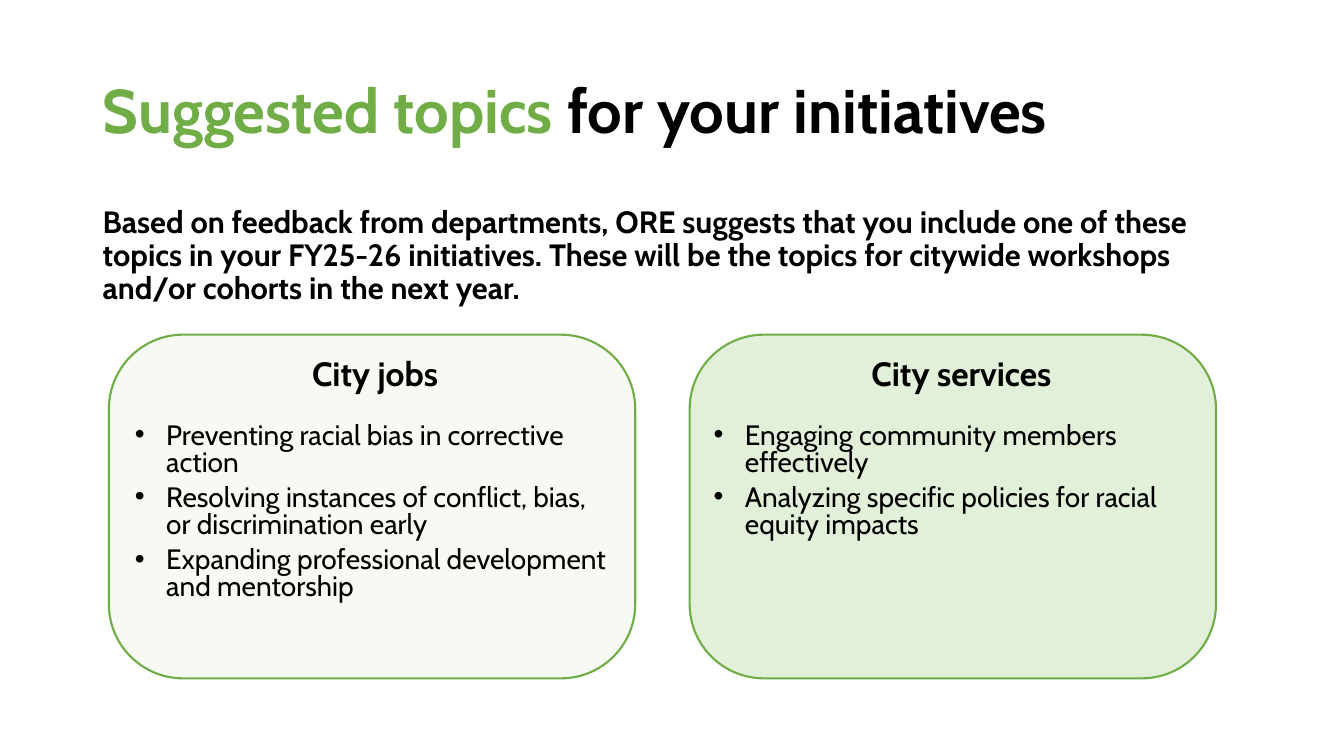
from lxml import etree
from pptx import Presentation
from pptx.dml.color import RGBColor
from pptx.enum.shapes import MSO_SHAPE
from pptx.enum.text import MSO_ANCHOR, MSO_AUTO_SIZE, PP_ALIGN
from pptx.oxml.ns import qn
from pptx.util import Inches, Pt

ROUNDED = MSO_SHAPE.ROUNDED_RECTANGLE
MIDDLE = MSO_ANCHOR.MIDDLE
NO_FIT = MSO_AUTO_SIZE.NONE
LEFT, CENTER = PP_ALIGN.LEFT, PP_ALIGN.CENTER

GREEN = RGBColor(0x70, 0xAD, 0x47)
PALE_GREEN = RGBColor(0xE2, 0xF0, 0xD9)
BLACK = RGBColor(0, 0, 0)
FONT = "Cabin"

TITLE = [("Suggested topics ", GREEN), ("for your initiatives", BLACK)]
INTRO = (
    "Based on feedback from departments, ORE suggests that you include one of "
    "these topics in your FY25-26 initiatives. These will be the topics for "
    "citywide workshops and/or cohorts in the next year."
)
# Card left, text left, text width and text height are in inches; opacity in percent.
CARDS = [
    {
        "heading": "City jobs",
        "topics": [
            "Preventing racial bias in corrective action",
            "Resolving instances of conflict, bias, or discrimination early",
            "Expanding professional development and mentorship",
        ],
        "left": 1.08, "text_left": 1.24, "text_width": 4.96, "text_height": 2.52,
        "opacity": 30,
    },
    {
        "heading": "City services",
        "topics": [
            "Engaging community members effectively",
            "Analyzing specific policies for racial equity impacts",
        ],
        "left": 6.84, "text_left": 6.98, "text_width": 5.11, "text_height": 1.9,
        "opacity": 100,
    },
]
CARD_TOP, CARD_WIDTH, CARD_HEIGHT = 3.32, 5.22, 3.41
CARD_TEXT_TOP = 3.53
TOPIC_INDENT = Inches(0.31)


def add_run(paragraph, text, size, color=BLACK, bold=False):
    run = paragraph.add_run()
    run.text = text
    run.font.color.rgb = color
    styles = {"name": FONT, "size": Pt(size), "bold": bold}
    for key, value in styles.items():
        setattr(run.font, key, value)


def format_paragraph(paragraph, **styles):
    for key, value in styles.items():
        setattr(paragraph, key, value)


def add_text_frame(slide, left, top, width, height):
    box = slide.shapes.add_textbox(*map(Inches, (left, top, width, height)))
    box.text_frame.word_wrap = True
    return box.text_frame


def add_bullet(paragraph):
    properties = paragraph._p.get_or_add_pPr()
    properties.set("marL", str(TOPIC_INDENT))
    properties.set("indent", str(-TOPIC_INDENT))
    etree.SubElement(properties, qn("a:buFont")).set("typeface", "Arial")
    etree.SubElement(properties, qn("a:buChar")).set("char", "•")


def add_card(slide, card):
    panel = slide.shapes.add_shape(
        ROUNDED, *map(Inches, (card["left"], CARD_TOP, CARD_WIDTH, CARD_HEIGHT)))
    panel.adjustments[0] = 0.216
    panel.shadow.inherit = False
    panel.fill.solid()
    panel.fill.fore_color.rgb = PALE_GREEN
    panel.line.color.rgb = GREEN
    panel.line.width = Pt(1.5)
    if card["opacity"] < 100:
        color = panel._element.spPr.find(qn("a:solidFill"))[0]
        etree.SubElement(color, qn("a:alpha")).set("val", str(card["opacity"] * 1000))

    frame = add_text_frame(
        slide, card["text_left"], CARD_TEXT_TOP, card["text_width"], card["text_height"])
    heading = frame.paragraphs[0]
    format_paragraph(heading, alignment=CENTER, line_spacing=0.8, space_after=Pt(22))
    add_run(heading, card["heading"], 24, bold=True)
    for topic in card["topics"]:
        paragraph = frame.add_paragraph()
        format_paragraph(paragraph, line_spacing=0.8, space_after=Pt(6))
        add_bullet(paragraph)
        add_run(paragraph, topic, 20)


def main():
    deck = Presentation()
    deck.slide_width, deck.slide_height = Inches(13.33), Inches(7.5)
    slide = deck.slides.add_slide(deck.slide_layouts[5])

    title = slide.shapes.title
    place = {"left": 0.92, "top": 0.4, "width": 11.5, "height": 1.45}
    for side, length in place.items():
        setattr(title, side, Inches(length))
    title.text_frame.vertical_anchor = MIDDLE
    title.text_frame.auto_size = NO_FIT
    title_line = title.text_frame.paragraphs[0]
    format_paragraph(title_line, alignment=LEFT, line_spacing=0.9)
    for text, color in TITLE:
        add_run(title_line, text, 44, color, bold=True)

    intro = add_text_frame(slide, 0.92, 2, 11.5, 1.27).paragraphs[0]
    format_paragraph(intro, line_spacing=0.9)
    add_run(intro, INTRO, 22, bold=True)

    for card in CARDS:
        add_card(slide, card)

    deck.save("out.pptx")


if __name__ == "__main__":
    main()
